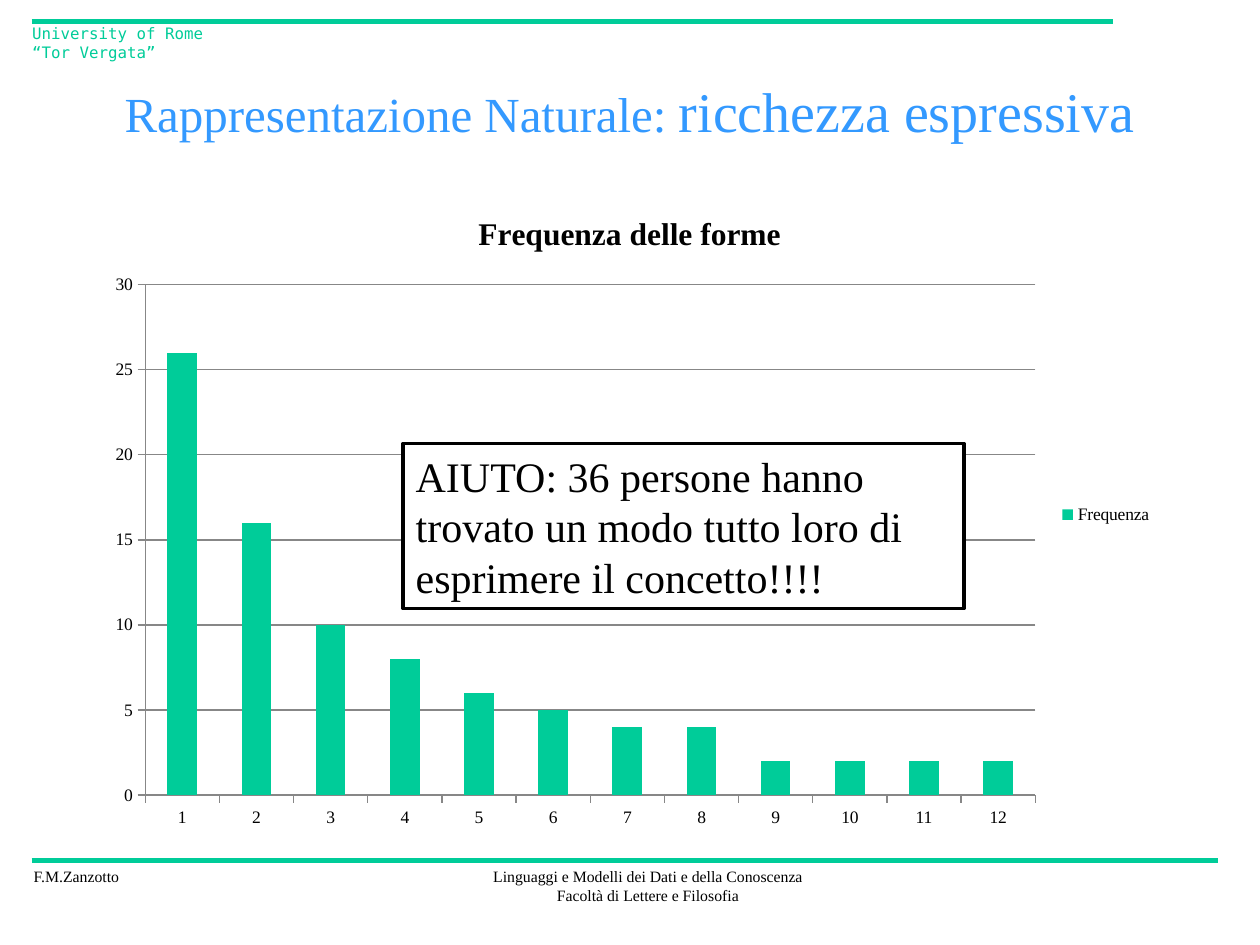
from lxml import etree
from pptx import Presentation
from pptx.chart.data import CategoryChartData
from pptx.dml.color import RGBColor
from pptx.enum.chart import XL_CHART_TYPE, XL_LEGEND_POSITION, XL_TICK_MARK
from pptx.enum.shapes import MSO_CONNECTOR, MSO_SHAPE
from pptx.enum.text import MSO_ANCHOR, PP_ALIGN
from pptx.oxml.ns import qn
from pptx.util import Cm, Pt

COLUMNS = XL_CHART_TYPE.COLUMN_CLUSTERED
LEGEND_RIGHT = XL_LEGEND_POSITION.RIGHT
TICK_OUTSIDE = XL_TICK_MARK.OUTSIDE
STRAIGHT = MSO_CONNECTOR.STRAIGHT
RECTANGLE = MSO_SHAPE.RECTANGLE
MIDDLE = MSO_ANCHOR.MIDDLE
LEFT, CENTER = PP_ALIGN.LEFT, PP_ALIGN.CENTER

GREEN = RGBColor(0x00, 0xCC, 0x99)
BLUE = RGBColor(0x33, 0x99, 0xFF)
BLACK = RGBColor(0x00, 0x00, 0x00)
WHITE = RGBColor(0xFF, 0xFF, 0xFF)
GREY = RGBColor(0x87, 0x87, 0x87)
SERIF = "Times New Roman"
MONO = "DejaVu Sans Mono"


def set_font(font, name, size, color):
    font.name = name
    font.size = Pt(size)
    font.color.rgb = color


presentation = Presentation()
presentation.slide_width = Cm(25.4)
presentation.slide_height = Cm(19.05)
slide = presentation.slides.add_slide(presentation.slide_layouts[5])

# Rules above and below the content
for y, right in ((17.35, 24.56), (0.43, 22.43)):
    rule = slide.shapes.add_connector(STRAIGHT, Cm(0.64), Cm(y), Cm(right), Cm(y))
    rule.line.color.rgb = GREEN
    rule.line.width = Pt(3)
    etree.SubElement(rule._element.spPr, qn("a:effectLst"))

# Footer and university name
small_texts = [
    (0.43, 17.35, 2.26, 0.64, ["F.M.Zanzotto"], LEFT, SERIF, BLACK),
    (9.68, 17.35, 6.76, 1.02,
     ["Linguaggi e Modelli dei Dati e della Conoscenza",
      "Facoltà di Lettere e Filosofia"], CENTER, SERIF, BLACK),
    (0.4, 0.36, 4.34, 0.64, ["University of Rome “Tor Vergata”"], LEFT, MONO, GREEN),
]
for left, top, width, height, lines, alignment, font_name, color in small_texts:
    box = slide.shapes.add_textbox(Cm(left), Cm(top), Cm(width), Cm(height))
    box.text_frame.word_wrap = font_name == MONO
    box.text_frame.text = "\n".join(lines)
    for paragraph in box.text_frame.paragraphs:
        paragraph.alignment = alignment
        set_font(paragraph.font, font_name, 9, color)

# Title
title = slide.shapes.title
title.left, title.top, title.width, title.height = Cm(1.9), Cm(1.27), Cm(21.59), Cm(1.9)
title.text_frame.vertical_anchor = MIDDLE
paragraph = title.text_frame.paragraphs[0]
paragraph.alignment = CENTER
for text, size in (("Rappresentazione Naturale: ", 28), ("ricchezza espressiva", 32)):
    run = paragraph.add_run()
    run.text = text
    set_font(run.font, SERIF, size, BLUE)

# Frequency chart
chart_data = CategoryChartData()
chart_data.categories = [str(number) for number in range(1, 13)]
chart_data.add_series("Frequenza", (26, 16, 10, 8, 6, 5, 4, 4, 2, 2, 2, 2))
chart = slide.shapes.add_chart(
    COLUMNS, Cm(1.9), Cm(3.81), Cm(21.59), Cm(13.13), chart_data).chart
set_font(chart.font, SERIF, 10, BLACK)

chart.has_title = True
chart.chart_title.include_in_layout = False
chart.chart_title.text_frame.text = "Frequenza delle forme"
title_font = chart.chart_title.text_frame.paragraphs[0].font
set_font(title_font, SERIF, 18, BLACK)
title_font.bold = True

chart.has_legend = True
chart.legend.position = LEGEND_RIGHT
chart.legend.include_in_layout = False

plot = chart.plots[0]
plot.gap_width = 150
plot.vary_by_categories = False
bar_fill = plot.series[0].format.fill
bar_fill.solid()
bar_fill.fore_color.rgb = GREEN

for axis in (chart.category_axis, chart.value_axis):
    axis.major_tick_mark = TICK_OUTSIDE
    axis.format.line.color.rgb = GREY
value_axis = chart.value_axis
value_axis.minimum_scale = 0
value_axis.maximum_scale = 30
value_axis.major_unit = 5
value_axis.has_major_gridlines = True
value_axis.major_gridlines.format.line.color.rgb = GREY

# Callout over the chart
callout = slide.shapes.add_shape(RECTANGLE, Cm(8.13), Cm(8.94), Cm(11.3), Cm(3.33))
callout.shadow.inherit = False
callout.fill.solid()
callout.fill.fore_color.rgb = WHITE
callout.line.color.rgb = BLACK
callout.line.width = Pt(2)
callout.text_frame.word_wrap = True
callout.text_frame.text = (
    "AIUTO: 36 persone hanno trovato un modo tutto loro di esprimere il concetto!!!!")
paragraph = callout.text_frame.paragraphs[0]
paragraph.alignment = LEFT
set_font(paragraph.font, SERIF, 24, BLACK)

presentation.save("out.pptx")
